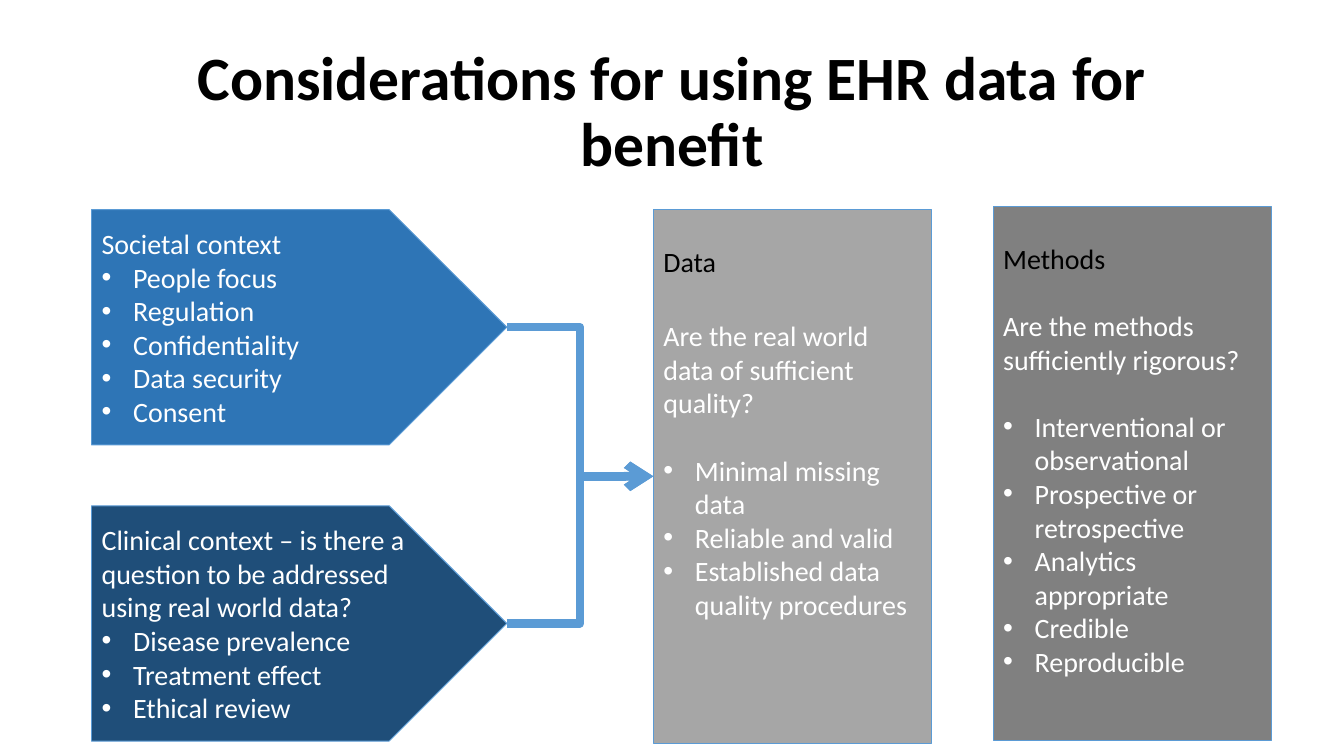
from dataclasses import dataclass

from lxml.etree import SubElement
from pptx import Presentation
from pptx.dml.color import RGBColor
from pptx.enum.shapes import MSO_CONNECTOR as Connector, MSO_SHAPE as Preset
from pptx.enum.text import MSO_ANCHOR as Anchor, PP_ALIGN as Align
from pptx.oxml.ns import qn
from pptx.util import Pt

FONT = "Calibri"
BLACK = RGBColor(0x00, 0x00, 0x00)
WHITE = RGBColor(0xFF, 0xFF, 0xFF)
OUTLINE = RGBColor(0x5B, 0x9B, 0xD5)
BLUE = RGBColor(0x2E, 0x75, 0xB6)
NAVY = RGBColor(0x1F, 0x4E, 0x79)
LIGHT_GREY = RGBColor(0xA6, 0xA6, 0xA6)
DARK_GREY = RGBColor(0x80, 0x80, 0x80)

BODY_SIZE = 15
BULLET_INDENT = 16.9
RIGHT_SITE, LEFT_SITE = 3, 1


@dataclass(frozen=True)
class Line:
    text: str
    color: RGBColor = WHITE
    bullet: bool = False
    gap: float = 0


@dataclass(frozen=True)
class Panel:
    preset: Preset
    left: float
    top: float
    width: float
    height: float
    fill: RGBColor
    lines: list[Line]
    anchor: Anchor = Anchor.MIDDLE
    margin_top: float = 3.6


def bullets(*texts: str, gap: float = 0) -> list[Line]:
    """Bulleted lines, with a gap above the first one."""
    return [Line(text, bullet=True, gap=0 if index else gap)
            for index, text in enumerate(texts)]


def context(top: float, fill: RGBColor, lines: list[Line]) -> Panel:
    return Panel(Preset.PENTAGON, 49, top, 222.5, 126, fill, lines)


def column(left: float, top: float, fill: RGBColor, lines: list[Line]) -> Panel:
    return Panel(Preset.RECTANGLE, left, top, 149, 285.8, fill, lines,
                 Anchor.TOP, 18.5)


SOCIETAL = context(112.3, BLUE, [
    Line("Societal context"),
    *bullets("People focus", "Regulation", "Confidentiality",
             "Data security", "Consent"),
])
CLINICAL = context(271, NAVY, [
    Line("Clinical context – is there a question to be addressed "
         "using real world data?"),
    *bullets("Disease prevalence", "Treatment effect", "Ethical review"),
])
DATA = column(350, 112.3, LIGHT_GREY, [
    Line("Data", BLACK),
    Line("Are the real world data of sufficient quality?", gap=22),
    *bullets("Minimal missing data", "Reliable and valid",
             "Established data quality procedures", gap=18),
])
METHODS = column(532, 110.8, DARK_GREY, [
    Line("Methods", BLACK),
    Line("Are the methods sufficiently rigorous?", gap=18),
    *bullets("Interventional or observational", "Prospective or retrospective",
             "Analytics appropriate", "Credible", "Reproducible", gap=18),
])


def set_frame(frame, anchor: Anchor, margin_top: float = 3.6) -> None:
    frame.word_wrap = True
    frame.vertical_anchor = anchor
    frame.margin_left = frame.margin_right = Pt(5.4)
    frame.margin_top, frame.margin_bottom = Pt(margin_top), Pt(3.6)


def add_run(paragraph, text: str, size: float, color: RGBColor,
            bold: bool = False) -> None:
    run = paragraph.add_run()
    run.text = text
    run.font.name = FONT
    run.font.size = Pt(size)
    run.font.bold = bold
    run.font.color.rgb = color


def add_bullet(paragraph) -> None:
    properties = paragraph._p.get_or_add_pPr()
    properties.set("marL", str(Pt(BULLET_INDENT)))
    properties.set("indent", str(-Pt(BULLET_INDENT)))
    SubElement(properties, qn("a:buFont")).set("typeface", "Arial")
    SubElement(properties, qn("a:buChar")).set("char", "•")


def add_title(slide, text: str) -> None:
    box = slide.shapes.add_textbox(Pt(49.7), Pt(21.6), Pt(620.6), Pt(78.5))
    set_frame(box.text_frame, Anchor.MIDDLE)
    paragraph = box.text_frame.paragraphs[0]
    paragraph.alignment = Align.CENTER
    paragraph.line_spacing = 0.9
    add_run(paragraph, text, 33, BLACK, bold=True)


def add_panel(slide, panel: Panel):
    shape = slide.shapes.add_shape(panel.preset, Pt(panel.left), Pt(panel.top),
                                   Pt(panel.width), Pt(panel.height))
    shape.shadow.inherit = False
    shape.fill.solid()
    shape.fill.fore_color.rgb = panel.fill
    shape.line.color.rgb = OUTLINE
    shape.line.width = Pt(0.5)
    frame = shape.text_frame
    set_frame(frame, panel.anchor, panel.margin_top)
    for index, line in enumerate(panel.lines):
        paragraph = frame.add_paragraph() if index else frame.paragraphs[0]
        paragraph.alignment = Align.LEFT
        paragraph.space_before = Pt(line.gap)
        if line.bullet:
            add_bullet(paragraph)
        add_run(paragraph, line.text, BODY_SIZE, line.color)
    return shape


def add_arrow(slide, source, target) -> None:
    """Elbow arrow from the right tip of source to the left side of target."""
    arrow = slide.shapes.add_connector(Connector.ELBOW, 0, 0, 0, 0)
    arrow.begin_connect(source, RIGHT_SITE)
    arrow.end_connect(target, LEFT_SITE)
    arrow.line.color.rgb = OUTLINE
    arrow.line.width = Pt(4.5)
    SubElement(arrow.line._get_or_add_ln(), qn("a:tailEnd")).set("type", "arrow")
    SubElement(arrow._element.spPr, qn("a:effectLst"))


def main() -> None:
    presentation = Presentation()
    presentation.slide_width, presentation.slide_height = Pt(720), Pt(405)
    slide = presentation.slides.add_slide(presentation.slide_layouts[6])

    # Title
    add_title(slide, "Considerations for using EHR data for benefit")

    # Context arrows and the two columns
    societal, clinical, data, _ = [
        add_panel(slide, panel)
        for panel in (SOCIETAL, CLINICAL, DATA, METHODS)]

    # Both contexts lead to the data
    for source in (societal, clinical):
        add_arrow(slide, source, data)

    presentation.save("out.pptx")


if __name__ == "__main__":
    main()
